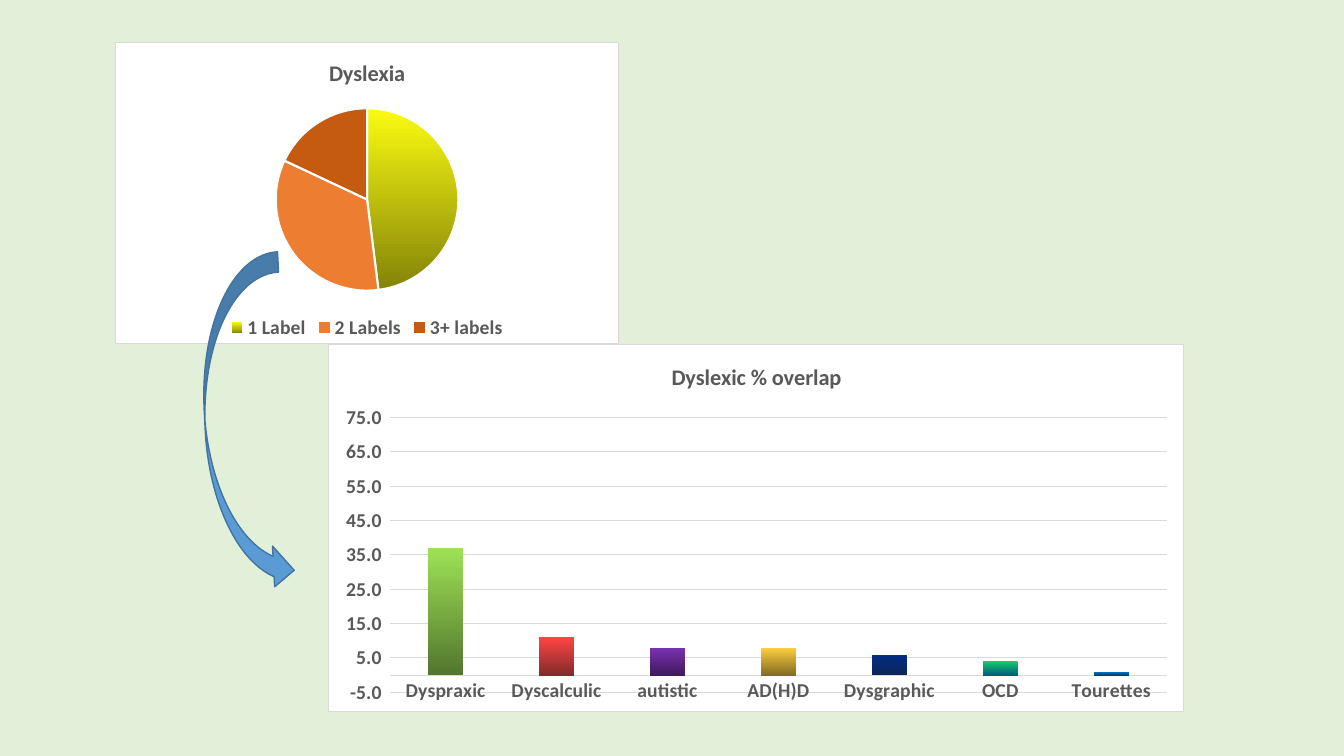
from pptx import Presentation
from pptx.chart.data import CategoryChartData
from pptx.dml.color import RGBColor
from pptx.enum.chart import XL_CHART_TYPE, XL_LEGEND_POSITION, XL_TICK_MARK
from pptx.enum.shapes import MSO_SHAPE
from pptx.oxml import parse_xml
from pptx.oxml.ns import nsdecls, qn
from pptx.util import Inches, Pt

HUES = {
    "page": "E2F0D9", "card": "FFFFFF", "rule": "D9D9D9", "text": "595959",
    "ink": "000000", "blue": "5B9BD5", "edge": "43739E",
    "orange": "ED7D31", "rust": "C55A11",
}
COLS, ROWS = 160, 90

# Each part: label, value, fill (a hue name or top and bottom of a gradient)
LABELS = [
    ("1 Label", 48, ("FBFB11", "838309")),
    ("2 Labels", 34, "orange"),
    ("3+ labels", 18, "rust"),
]
OVERLAP = [
    ("Dyspraxic", 37, ("9EE256", "52762D")),
    ("Dyscalculic", 11, ("FE4444", "832B2B")),
    ("autistic", 8, ("7B32B2", "401A5D")),
    ("AD(H)D", 8, ("FECF40", "846C21")),
    ("Dysgraphic", 6, ("012D86", "0E2557")),
    ("OCD", 4, ("14CD68", "035C7D")),
    ("Tourettes", 1, ("007BD3", "034373")),
]


def rgb(hue):
    return RGBColor.from_string(HUES.get(hue, hue))


class Deck:
    face = "Calibri"

    def __init__(self):
        self.prs = Presentation()
        self.prs.slide_width, self.prs.slide_height = Inches(13.33), Inches(7.5)
        self.slide = self.prs.slides.add_slide(self.prs.slide_layouts[6])
        self.paint(self.slide.background.fill, "page")

    def place(self, col, row, wide, high):
        dx, dy = self.prs.slide_width / COLS, self.prs.slide_height / ROWS
        return int(col * dx), int(row * dy), int(wide * dx), int(high * dy)

    def paint(self, fill, hue):
        if isinstance(hue, tuple):
            fill.gradient()
            fill.gradient_angle = 270
            for stop, tone in zip(fill.gradient_stops, hue):
                stop.color.rgb = rgb(tone)
        else:
            fill.solid()
            fill.fore_color.rgb = rgb(hue)

    def stroke(self, line, hue, width):
        self.paint(line.fill, hue)
        line.width = Pt(width)

    def style(self, font, size, hue="text", bold=True):
        font.name, font.size, font.bold = self.face, Pt(size), bold
        font.color.rgb = rgb(hue)

    def frame(self, chart):
        """Give the chart area square corners, a fill and a thin border."""
        root = chart.element
        body = root.find(qn("c:chart"))
        if root.find(qn("c:roundedCorners")) is None:
            body.addprevious(parse_xml(f'<c:roundedCorners {nsdecls("c")} val="0"/>'))
        body.addnext(parse_xml(
            f'<c:spPr {nsdecls("c", "a")}>'
            f'<a:solidFill><a:srgbClr val="{HUES["card"]}"/></a:solidFill>'
            f'<a:ln w="{Pt(0.75)}"><a:solidFill><a:srgbClr val="{HUES["rule"]}"/>'
            '</a:solidFill></a:ln></c:spPr>'))

    def chart(self, kind, title, parts, *box):
        data = CategoryChartData()
        data.categories = [name for name, _, _ in parts]
        data.add_series(title, [value for _, value, _ in parts])
        chart = self.slide.shapes.add_chart(kind, *self.place(*box), data).chart
        self.style(chart.font, 10, "ink", False)
        self.frame(chart)
        chart.has_title = True
        run = chart.chart_title.text_frame.paragraphs[0].add_run()
        run.text = title
        self.style(run.font, 16)
        chart.chart_title.include_in_layout = False
        points = chart.plots[0].series[0].points
        for i, (_, _, hue) in enumerate(parts):
            self.paint(points[i].format.fill, hue)
        return chart

    def pie(self, title, parts, *box):
        chart = self.chart(XL_CHART_TYPE.PIE, title, parts, *box)
        chart.plots[0].vary_by_categories = True
        for i in range(len(parts)):
            self.stroke(chart.plots[0].series[0].points[i].format.line, "card", 1.5)
        chart.has_legend = True
        chart.legend.position = XL_LEGEND_POSITION.BOTTOM
        chart.legend.include_in_layout = False
        self.style(chart.legend.font, 14)

    def bars(self, title, parts, *box):
        chart = self.chart(XL_CHART_TYPE.COLUMN_CLUSTERED, title, parts, *box)
        chart.has_legend = False
        plot = chart.plots[0]
        plot.vary_by_categories = False
        plot.gap_width, plot.overlap = 219, -27
        self.paint(plot.series[0].format.fill, "blue")
        plot.series[0].invert_if_negative = False
        cats, vals = chart.category_axis, chart.value_axis
        for axis in (cats, vals):
            axis.major_tick_mark = axis.minor_tick_mark = XL_TICK_MARK.NONE
            self.style(axis.tick_labels.font, 14)
        self.stroke(cats.format.line, "rule", 0.75)
        vals.format.line.fill.background()
        vals.minimum_scale, vals.maximum_scale, vals.major_unit = -5, 75, 10
        vals.has_major_gridlines = True
        self.stroke(vals.major_gridlines.format.line, "rule", 0.75)
        vals.tick_labels.number_format = "0.0_ "
        vals.tick_labels.number_format_is_linked = False

    def arrow(self, turn, *box):
        shape = self.slide.shapes.add_shape(
            MSO_SHAPE.CURVED_RIGHT_ARROW, *self.place(*box))
        shape.rotation = turn
        shape.shadow.inherit = False
        self.paint(shape.fill, "blue")
        self.stroke(shape.line, "edge", 1)


def main():
    deck = Deck()
    # Share of people by number of labels
    deck.pie("Dyslexia", LABELS, 13.7, 5, 60, 36)
    # Overlap with other conditions
    deck.bars("Dyslexic % overlap", OVERLAP, 39.1, 41, 101.9, 43.8)
    # Arrow from the pie to the columns
    deck.arrow(357, 24.4, 30.2, 9.7, 40.4)
    deck.prs.save("out.pptx")


if __name__ == "__main__":
    main()
